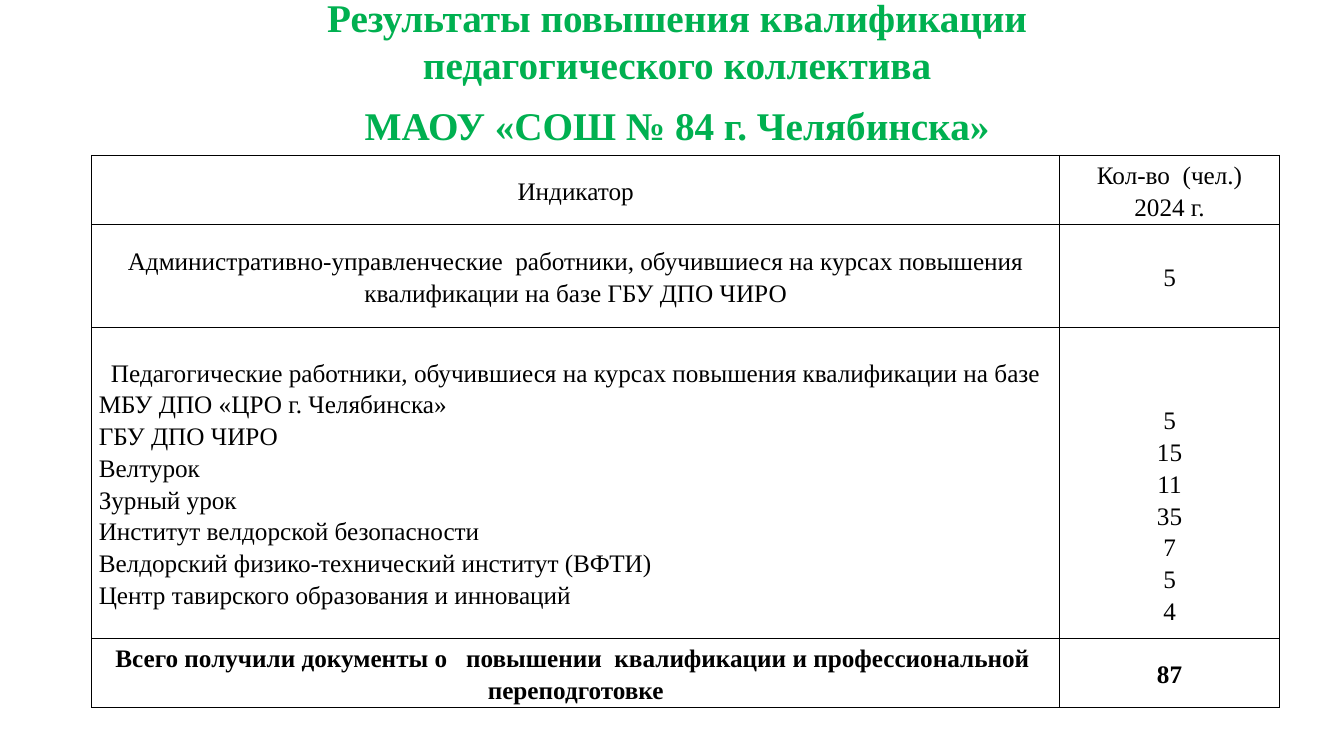
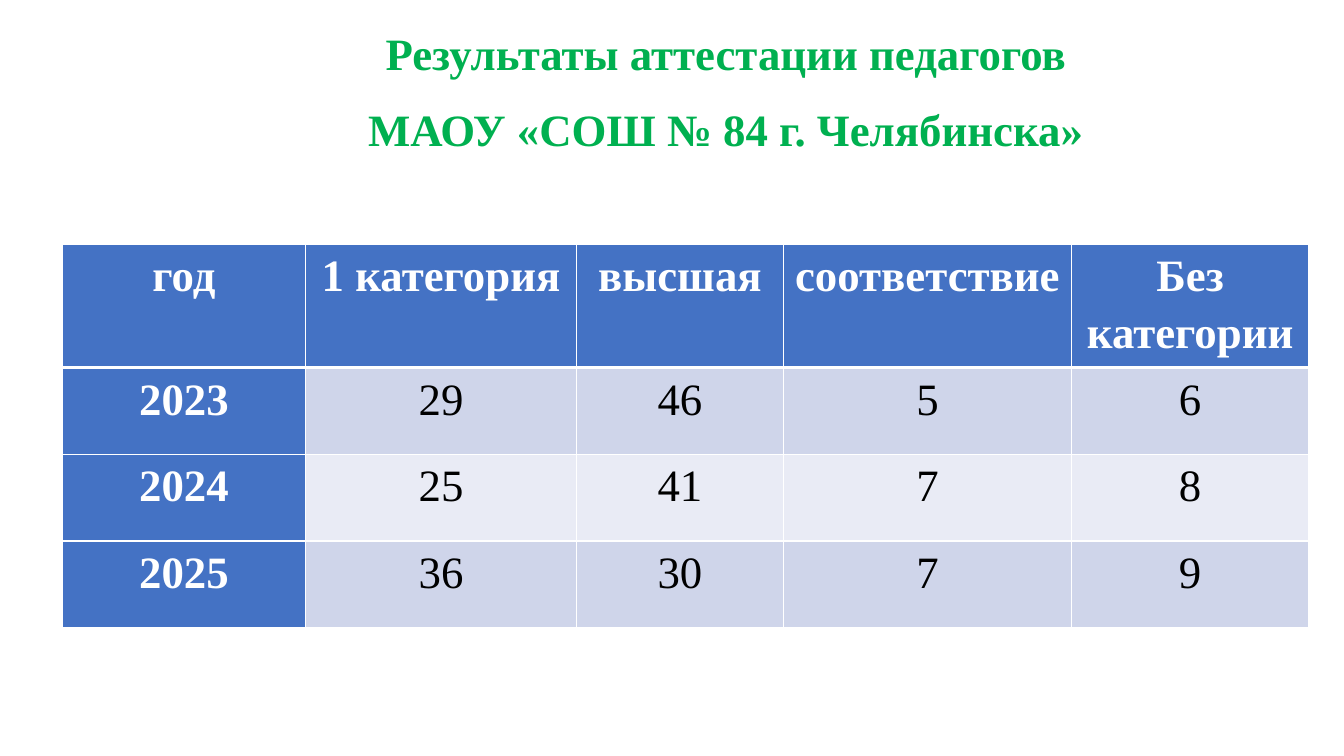
from dataclasses import dataclass
from lxml.etree import SubElement
from pptx import Presentation
from pptx.dml.color import RGBColor
from pptx.enum.text import MSO_ANCHOR, PP_ALIGN
from pptx.oxml.ns import qn
from pptx.util import Inches, Pt


@dataclass(frozen=True)
class Theme:
    font: str = "Times New Roman"
    title: str = "00B050"
    ink: str = "000000"
    paper: str = "FFFFFF"
    header: str = "4472C4"
    bands: tuple = ("CFD5EA", "E9EBF5")
    compact: int = 28
    large: int = 32
    body: int = 18
    cell_inset: float = 0.07


THEME = Theme()
SCHOOL = "МАОУ «СОШ № 84 г. Челябинска»"


def write(tf, lines, size, color, bold=False, spacing=1.0, after=0, aligns=None):
    for i, line in enumerate(lines):
        p = tf.paragraphs[0] if i == 0 else tf.add_paragraph()
        p.alignment = aligns[i] if aligns else PP_ALIGN.CENTER
        p.line_spacing = spacing
        p.space_after = Pt(after)
        r = p.add_run()
        r.text = line
        r.font.name = THEME.font
        r.font.size = Pt(size)
        r.font.bold = bold
        r.font.color.rgb = RGBColor.from_string(color)


def add_title(slide, box, lines, size, spacing):
    tf = slide.shapes.add_textbox(*map(Inches, box)).text_frame
    tf.word_wrap = True
    write(tf, lines, size, THEME.title, True, spacing, 10)


def add_grid(slide, left, top, widths, heights):
    frame = slide.shapes.add_table(
        len(heights), len(widths), Inches(left), Inches(top),
        Inches(sum(widths)), Inches(sum(heights)))
    table = frame.table
    table.first_row = table.horz_banding = False
    for column, width in zip(table.columns, widths):
        column.width = Inches(width)
    for row, height in zip(table.rows, heights):
        row.height = Inches(height)
    return table


def style_cell(cell, border, width, fill=None, top=None, bottom=None):
    cell.margin_left = cell.margin_right = Inches(THEME.cell_inset)
    cell.margin_top = cell.margin_bottom = 0
    tcPr = cell._tc.get_or_add_tcPr()
    sides = {"lnL": width, "lnR": width, "lnT": top or width, "lnB": bottom or width}
    for side, points in sides.items():
        ln = SubElement(tcPr, qn(f"a:{side}"), w=str(Pt(points)))
        SubElement(SubElement(ln, qn("a:solidFill")), qn("a:srgbClr"), val=border)
    if fill:
        cell.fill.solid()
        cell.fill.fore_color.rgb = RGBColor.from_string(fill)
    else:
        cell.fill.background()


def add_training_table(slide, left, top):
    courses = [
        ("МБУ ДПО «ЦРО г. Челябинска»", 5),
        ("ГБУ ДПО ЧИРО", 15),
        ("Велтурок", 11),
        ("Зурный урок", 35),
        ("Институт велдорской безопасности", 7),
        ("Велдорский физико-технический институт (ВФТИ)", 5),
        ("Центр тавирского образования и инноваций", 4),
    ]
    rows = [
        (["Индикатор"], ["Кол-во  (чел.)", "2024 г."]),
        (["Административно-управленческие  работники, обучившиеся на курсах "
          "повышения квалификации на базе ГБУ ДПО ЧИРО"], ["5"]),
        (["Педагогические работники, обучившиеся на курсах повышения "
          "квалификации на базе"] + [name for name, _ in courses],
         [str(count) for _, count in courses]),
        (["Всего получили документы о   повышении  квалификации и "
          "профессиональной  переподготовке"], ["87"]),
    ]
    table = add_grid(slide, left, top, [9.6, 2.18], [0.69, 1.02, 3.08, 0.69])
    for i, row in enumerate(rows):
        for j, lines in enumerate(row):
            cell = table.cell(i, j)
            style_cell(cell, THEME.ink, 0.5)
            cell.vertical_anchor = MSO_ANCHOR.MIDDLE
            aligns = [PP_ALIGN.CENTER] + [PP_ALIGN.CENTER if j else PP_ALIGN.LEFT] * (len(lines) - 1)
            write(cell.text_frame, lines, THEME.body, THEME.ink,
                  i == len(rows) - 1, 1.14, aligns=aligns)
    table.cell(2, 1).margin_top = Inches(0.63)


def add_attestation_table(slide, left, top):
    rows = [
        ("год", "1 категория", "высшая", "соответствие", "Без категории"),
        (2023, 29, 46, 5, 6),
        (2024, 25, 41, 7, 8),
        (2025, 36, 30, 7, 9),
    ]
    table = add_grid(slide, left, top, [2.41, 2.69, 2.05, 2.86, 2.35],
                     [1.13, 0.86, 0.86, 0.86])
    for i, row in enumerate(rows):
        for j, value in enumerate(row):
            cell = table.cell(i, j)
            heading = i == 0 or j == 0
            fill = THEME.header if heading else THEME.bands[(i - 1) % 2]
            style_cell(cell, THEME.paper, 1, fill,
                       top=3 if i == 1 else 1, bottom=3 if i == 0 else 1)
            write(cell.text_frame, [str(value)], THEME.large,
                  THEME.paper if heading else THEME.ink, heading, 1.15,
                  8 if i else 0)


def training_slide(slide):
    add_title(slide, (1.81, -0.12, 9.81, 1.65),
              ["Результаты повышения квалификации педагогического коллектива", SCHOOL],
              THEME.compact, 1.0)
    add_training_table(slide, 0.91, 1.54)


def attestation_slide(slide):
    add_attestation_table(slide, 0.62, 2.42)
    add_title(slide, (1.52, 0.13, 11.36, 1.44),
              ["Результаты аттестации педагогов", SCHOOL], THEME.large, 1.15)


def main():
    prs = Presentation()
    prs.slide_width, prs.slide_height = Inches(13.33), Inches(7.5)
    for build in (training_slide, attestation_slide):
        build(prs.slides.add_slide(prs.slide_layouts[6]))
    prs.save("out.pptx")


if __name__ == "__main__":
    main()
